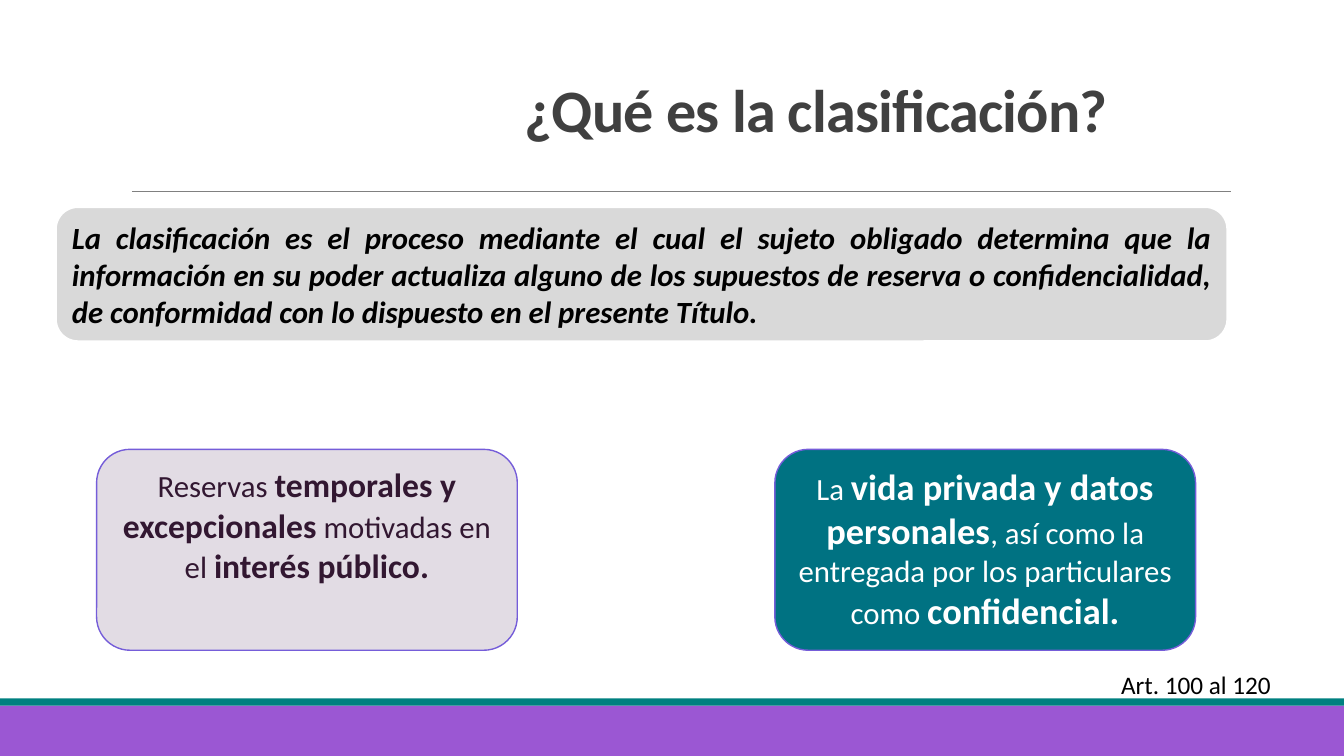
from dataclasses import dataclass

from lxml import etree
from pptx import Presentation
from pptx.dml.color import RGBColor
from pptx.enum.shapes import MSO_CONNECTOR, MSO_SHAPE
from pptx.enum.text import MSO_ANCHOR, PP_ALIGN
from pptx.oxml.ns import qn
from pptx.slide import Slide
from pptx.text.text import TextFrame
from pptx.util import Pt

RECTANGLE = MSO_SHAPE.RECTANGLE
ROUNDED = MSO_SHAPE.ROUNDED_RECTANGLE
STRAIGHT = MSO_CONNECTOR.STRAIGHT
TOP, MIDDLE, BOTTOM = MSO_ANCHOR.TOP, MSO_ANCHOR.MIDDLE, MSO_ANCHOR.BOTTOM
CENTER, JUSTIFY = PP_ALIGN.CENTER, PP_ALIGN.JUSTIFY


@dataclass(frozen=True)
class Theme:
    font: str = "Calibri"
    purple: str = "9B57D3"
    green: str = "008080"
    rule: str = "808080"
    title: str = "404040"
    black: str = "000000"
    white: str = "FFFFFF"
    gray: str = "D9D9D9"
    teal: str = "007282"
    lilac: str = "E2DCE4"
    plum: str = "321731"
    outline: str = "755DD9"
    title_size: float = 43
    body_size: float = 22
    note_size: float = 18


@dataclass(frozen=True)
class Area:
    left: float
    top: float
    width: float
    height: float

    def lengths(self) -> tuple[Pt, Pt, Pt, Pt]:
        return Pt(self.left), Pt(self.top), Pt(self.width), Pt(self.height)


@dataclass(frozen=True)
class Span:
    text: str
    size: float
    bold: bool = False
    italic: bool = False


@dataclass(frozen=True)
class Panel:
    area: Area
    fill: str
    line: str
    line_width: float
    text_color: str
    spans: list[Span]
    align: PP_ALIGN = CENTER
    anchor: MSO_ANCHOR = TOP


THEME = Theme()
PAGE_WIDTH, PAGE_HEIGHT = 960, 540
CARD_TOP, CARD_WIDTH, CARD_HEIGHT = 321, 300.5, 143.5

BANDS = [
    (Area(0, 504, PAGE_WIDTH, 36), THEME.purple),
    (Area(0, 498.75, PAGE_WIDTH, 5.25), THEME.green),
]

PANELS = [
    Panel(
        Area(39.6, 147.6, 837.4, 96.5), THEME.gray, THEME.white, 2, THEME.black,
        [Span("La clasificación es el proceso mediante el cual el sujeto obligado "
              "determina que la información en su poder actualiza alguno de los "
              "supuestos de reserva o confidencialidad, de conformidad con lo "
              "dispuesto en el presente Título.", THEME.body_size, True, True)],
        JUSTIFY, MIDDLE,
    ),
    Panel(
        Area(553.5, CARD_TOP, CARD_WIDTH, CARD_HEIGHT),
        THEME.teal, THEME.outline, 1, THEME.white,
        [Span("La ", THEME.body_size),
         Span("vida privada y datos personales", 26, True),
         Span(", así como la entregada por los particulares como ", THEME.body_size),
         Span("confidencial.", 26, True)],
    ),
    Panel(
        Area(69, CARD_TOP, CARD_WIDTH, CARD_HEIGHT),
        THEME.lilac, THEME.outline, 1, THEME.plum,
        [Span("Reservas ", THEME.body_size),
         Span("temporales y excepcionales", 24, True),
         Span(" motivadas en el ", THEME.body_size),
         Span("interés público.", 24, True)],
    ),
]


def write_text(frame: TextFrame, spans: list[Span], *, color: str,
               align: PP_ALIGN = CENTER, anchor: MSO_ANCHOR = TOP,
               line_spacing: float = 1.0, tracking: float = 0) -> None:
    """Fill the frame with one paragraph; tracking is in points."""
    frame.word_wrap = True
    frame.vertical_anchor = anchor
    para = frame.paragraphs[0]
    para.alignment = align
    para.line_spacing = line_spacing
    for span in spans:
        run = para.add_run()
        run.text = span.text
        run.font.name = THEME.font
        run.font.size = Pt(span.size)
        run.font.bold = span.bold
        run.font.italic = span.italic
        run.font.color.rgb = RGBColor.from_string(color)
        if tracking:
            run.font._element.set("spc", str(round(tracking * 100)))


def add_band(page: Slide, area: Area, color: str) -> None:
    band = page.shapes.add_shape(RECTANGLE, *area.lengths())
    band.shadow.inherit = False
    band.fill.solid()
    band.fill.fore_color.rgb = RGBColor.from_string(color)
    band.line.fill.background()


def add_rule(page: Slide, left: float, right: float, top: float) -> None:
    rule = page.shapes.add_connector(STRAIGHT, Pt(left), Pt(top), Pt(right), Pt(top))
    rule.line.color.rgb = RGBColor.from_string(THEME.rule)
    rule.line.width = Pt(0.5)
    etree.SubElement(rule._element.spPr, qn("a:effectLst"))


def add_panel(page: Slide, panel: Panel) -> None:
    box = page.shapes.add_shape(ROUNDED, *panel.area.lengths())
    box.shadow.inherit = False
    box.fill.solid()
    box.fill.fore_color.rgb = RGBColor.from_string(panel.fill)
    box.line.color.rgb = RGBColor.from_string(panel.line)
    box.line.width = Pt(panel.line_width)
    write_text(box.text_frame, panel.spans, color=panel.text_color,
               align=panel.align, anchor=panel.anchor)


def add_label(page: Slide, area: Area, span: Span, **text_format) -> None:
    box = page.shapes.add_textbox(*area.lengths())
    write_text(box.text_frame, [span], **text_format)


def main() -> None:
    deck = Presentation()
    deck.slide_width, deck.slide_height = Pt(PAGE_WIDTH), Pt(PAGE_HEIGHT)
    page = deck.slides.add_slide(deck.slide_layouts[6])
    for area, color in BANDS:
        add_band(page, area, color)
    add_rule(page, 94.3, 879, 136.8)
    add_label(page, Area(206, 46, 754, 61.25),
              Span("¿Qué es la clasificación?", THEME.title_size, True),
              color=THEME.title, anchor=BOTTOM, line_spacing=0.85, tracking=-0.5)
    add_label(page, Area(778.3, 474.5, 152, 29),
              Span("Art. 100 al 120", THEME.note_size), color=THEME.black)
    for panel in PANELS:
        add_panel(page, panel)
    deck.save("out.pptx")


if __name__ == "__main__":
    main()
